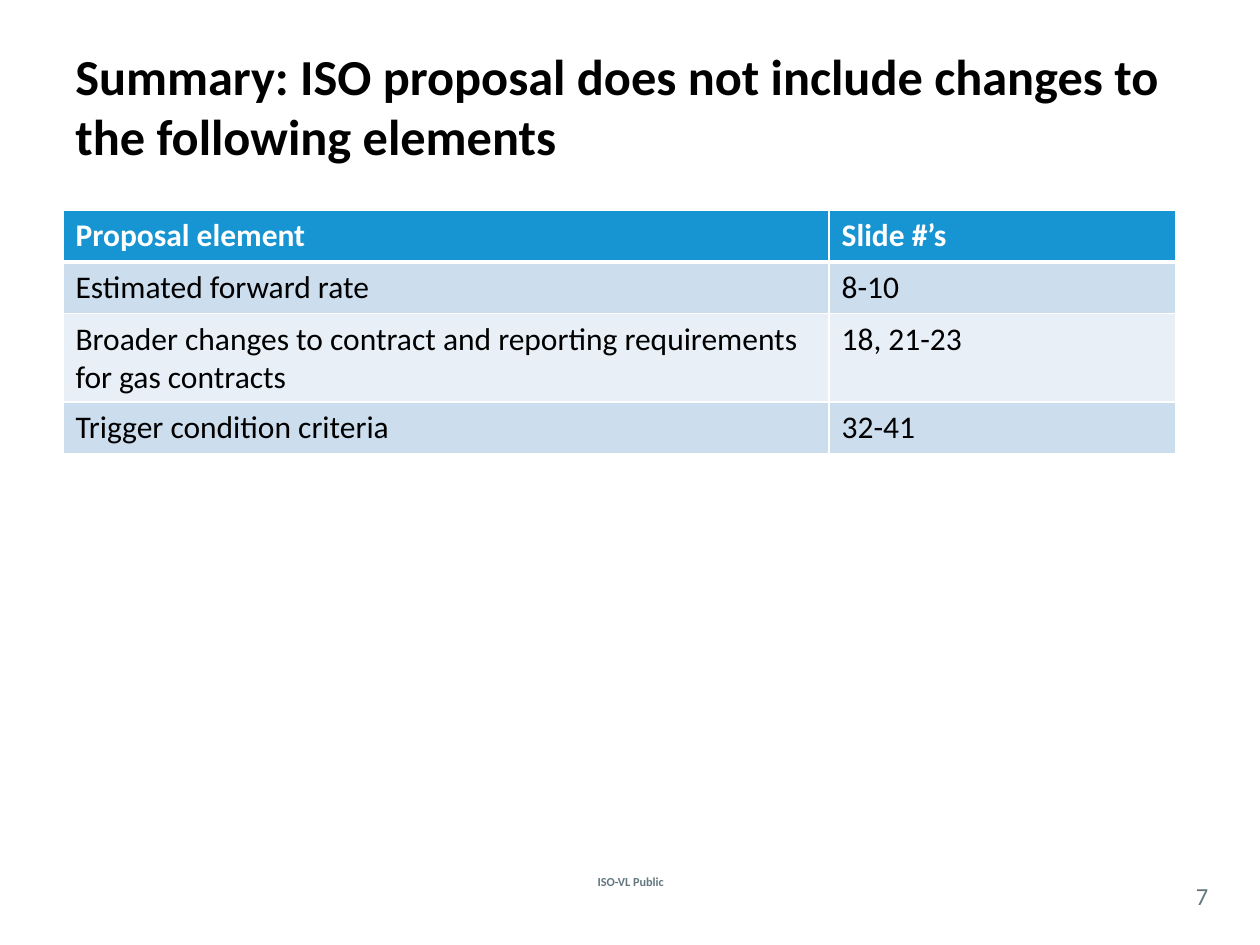
import pptx
import pptx.dml.color
import pptx.enum.text
import pptx.oxml
import pptx.oxml.ns
import pptx.util
from pptx.util import Inches

COLORS = {
    "text": "000000",
    "light": "FFFFFF",
    "muted": "62777F",
    "header": "1795D2",
    "odd": "CCDDEE",
    "even": "E8EFF7",
}
ALIGN = pptx.enum.text.PP_ALIGN
PROPOSAL_ROWS = [
    ("Proposal element", "Slide #’s"),
    ("Estimated forward rate", "8-10"),
    ("Broader changes to contract and reporting requirements for gas contracts", "18, 21-23"),
    ("Trigger condition criteria", "32-41"),
]
COLUMN_WIDTHS = (6.08, 2.75)
ROW_HEIGHTS = (0.41, 0.41, 0.7, 0.41)


def rgb(name):
    return pptx.dml.color.RGBColor.from_string(COLORS[name])


def write(frame, text, size, color, bold=False, align=ALIGN.LEFT):
    paragraph = frame.paragraphs[0]
    paragraph.alignment = align
    run = paragraph.add_run()
    run.text = text
    formats = {"name": "Calibri", "size": pptx.util.Pt(size), "bold": bold}
    for attribute, value in formats.items():
        setattr(run.font, attribute, value)
    run.font.color.rgb = rgb(color)


def add_label(slide, place, text, size, color, bold=False, align=ALIGN.LEFT, margins=None):
    frame = slide.shapes.add_textbox(*map(Inches, place)).text_frame
    formats = {"word_wrap": True, "vertical_anchor": pptx.enum.text.MSO_ANCHOR.MIDDLE}
    if margins is not None:
        for side in ("left", "top", "right", "bottom"):
            formats[f"margin_{side}"] = Inches(margins)
    for attribute, value in formats.items():
        setattr(frame, attribute, value)
    write(frame, text, size, color, bold, align)


def add_borders(cell, widths):
    properties = cell._tc.get_or_add_tcPr()
    for position, (side, width) in enumerate(widths.items()):
        border = pptx.oxml.parse_xml(
            f'<a:ln{side} {pptx.oxml.ns.nsdecls("a")} w="{pptx.util.Pt(width)}">'
            f'<a:solidFill><a:srgbClr val="{COLORS["light"]}"/></a:solidFill></a:ln{side}>'
        )
        properties.insert(position, border)


def add_proposal_table(slide):
    place = (0.5, 1.67, sum(COLUMN_WIDTHS), sum(ROW_HEIGHTS))
    table = slide.shapes.add_table(
        len(PROPOSAL_ROWS), len(COLUMN_WIDTHS), *map(Inches, place)
    ).table
    for column, width in zip(table.columns, COLUMN_WIDTHS):
        column.width = Inches(width)
    for index, (row, height, texts) in enumerate(zip(table.rows, ROW_HEIGHTS, PROPOSAL_ROWS)):
        row.height = Inches(height)
        is_header = index == 0
        fill = "header" if is_header else "odd" if index % 2 else "even"
        borders = {"L": 1, "R": 1, "T": 3 if index == 1 else 1, "B": 3 if is_header else 1}
        for cell, text in zip(row.cells, texts):
            cell.fill.solid()
            cell.fill.fore_color.rgb = rgb(fill)
            add_borders(cell, borders)
            write(cell.text_frame, text, 18, "light" if is_header else "text", is_header)


def main():
    deck = pptx.Presentation()
    deck.slide_width, deck.slide_height = Inches(10), Inches(7.5)
    slide = deck.slides.add_slide(deck.slide_layouts[6])
    add_label(slide, (4.27, 6.89, 1.47, 0.22), "ISO-VL Public", 7, "muted", True, ALIGN.CENTER)
    add_label(slide, (9.33, 6.96, 0.42, 0.29), "7", 14, "muted", align=ALIGN.CENTER, margins=0)
    add_label(
        slide, (0.5, 0.42, 9, 0.83),
        "Summary: ISO proposal does not include changes to the following elements",
        28.8, "text", True,
    )
    add_proposal_table(slide)
    deck.save("out.pptx")


if __name__ == "__main__":
    main()
